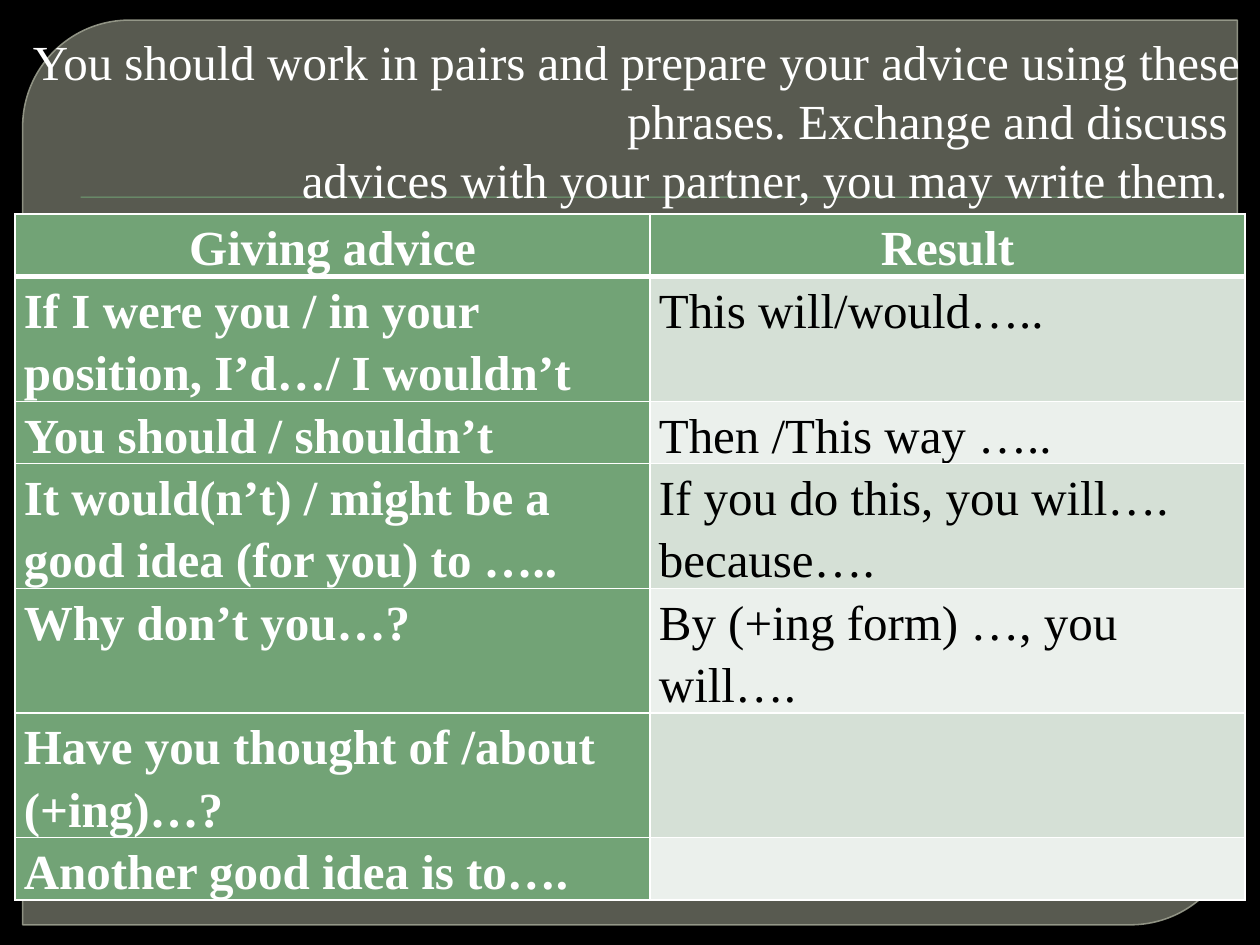
from dataclasses import dataclass

from lxml.etree import SubElement as Sub
from pptx import Presentation
from pptx.dml.color import RGBColor as Rgb
from pptx.enum.shapes import MSO_SHAPE as Kind
from pptx.enum.text import MSO_ANCHOR as Anchor, PP_ALIGN as Align
from pptx.oxml.ns import qn
from pptx.util import Inches, Pt


@dataclass(frozen=True)
class Theme:
    """Colours, font and type size of the slide."""
    back: str = "000000"
    panel: str = "888B7B"
    edge: str = "9DA090"
    green: str = "72A376"
    bands: tuple = ("D5E0D6", "EBF0EC")
    light: str = "FFFFFF"
    dark: str = "000000"
    font: str = "Times New Roman"
    size: int = 28
    pitch: float = 35.6


THEME = Theme()
TITLE = ("You should work in pairs and prepare your advice using these phrases. "
         "Exchange and discuss \vadvices with your partner, you may write them. ")
ROWS = [
    ("Giving advice", "Result"),
    ("If I were you / in your position, I’d…/ I wouldn’t", "This will/would….."),
    ("You should / shouldn’t", "Then /This way ….."),
    ("It would(n’t) / might be a good idea (for you) to …..",
     "If you do this, you will…. because…."),
    ("Why don’t you…?", "By (+ing form) …, you will…."),
    ("Have you thought of /about (+ing)…?", ""),
    ("Another good idea is to….", ""),
]
WIDTHS = (5.04, 4.72)
LOW, HIGH = 0.49, 0.99
HEIGHTS = (LOW, HIGH, LOW, HIGH, HIGH, HIGH, LOW)


def paint(fill, tone, alpha=None):
    """Fill with a solid colour, with an optional opacity in percent."""
    fill.solid()
    fill.fore_color.rgb = Rgb.from_string(tone)
    if alpha:
        node = fill._xPr.find(qn("a:solidFill"))[0]
        Sub(node, qn("a:alpha"), val=str(alpha * 1000))


def style(para, tone, bold=False):
    """Format every run of a paragraph."""
    for run in para.runs:
        font = run.font
        font.name, font.size, font.bold = THEME.font, Pt(THEME.size), bold
        font.color.rgb = Rgb.from_string(tone)


def add_panel(slide):
    """Draw the large panel with two round corners."""
    box = slide.shapes.add_shape(Kind.ROUND_2_DIAG_RECTANGLE, Inches(0.18),
                                 Inches(0.16), Inches(9.64), Inches(7.18))
    box.adjustments[0], box.adjustments[1] = 0.118, 0
    box.shadow.inherit = False
    paint(box.fill, THEME.panel, 65)
    box.line.width = Pt(0.87)
    paint(box.line.fill, THEME.edge, 88)


def add_rule(slide):
    """Draw the thin green rule behind the title."""
    rule = slide.shapes.add_shape(Kind.RECTANGLE, Inches(0.64), Inches(1.56),
                                  Inches(8.75), Inches(0.01))
    rule.shadow.inherit = False
    paint(rule.fill, THEME.green)
    rule.line.fill.background()


def add_title(slide):
    """Write the task at the top, growing up from its base."""
    box = slide.shapes.add_textbox(Inches(0.06), Inches(0.76),
                                   Inches(9.88), Inches(0.94))
    frame = box.text_frame
    frame.word_wrap = True
    frame.vertical_anchor = Anchor.BOTTOM
    frame.text = TITLE
    para = frame.paragraphs[0]
    para.alignment = Align.RIGHT
    style(para, THEME.light)


def add_edge(cell, side, width):
    """Give one side of a cell a solid border."""
    line = Sub(cell._tc.get_or_add_tcPr(), qn("a:ln" + side), w=str(Pt(width)))
    fill = Sub(line, qn("a:solidFill"))
    Sub(fill, qn("a:srgbClr"), val=THEME.light)


def fill_cell(cell, text, row, col):
    """Set the text, borders and fill of a cell by its place."""
    head, key = row == 0, row == 0 or col == 0
    cell.margin_left = cell.margin_right = Inches(0.07)
    cell.margin_top = cell.margin_bottom = 0
    thick = {(0, "B"), (1, "T")}
    for side in "LRTB":
        add_edge(cell, side, 3 if (row, side) in thick else 1)
    paint(cell.fill, THEME.green if key else THEME.bands[(row - 1) % 2])
    if text:
        cell.text_frame.text = text
        para = cell.text_frame.paragraphs[0]
        para.alignment = Align.CENTER if head else Align.LEFT
        para.line_spacing, para.space_after = Pt(THEME.pitch), Pt(10)
        style(para, THEME.light if key else THEME.dark, key)


def add_grid(slide):
    """Build the table of phrases and results."""
    grid = slide.shapes.add_table(len(ROWS), len(WIDTHS), Inches(0.12), Inches(1.7),
                                  Inches(sum(WIDTHS)), Inches(sum(HEIGHTS))).table
    for col, width in zip(grid.columns, WIDTHS):
        col.width = Inches(width)
    for row, height in zip(grid.rows, HEIGHTS):
        row.height = Inches(height)
    for r, texts in enumerate(ROWS):
        for c, text in enumerate(texts):
            fill_cell(grid.cell(r, c), text, r, c)


def main():
    """Build and save the slide."""
    deck = Presentation()
    deck.slide_width, deck.slide_height = Inches(10), Inches(7.5)
    slide = deck.slides.add_slide(deck.slide_layouts[6])
    paint(slide.background.fill, THEME.back)
    add_panel(slide)
    add_rule(slide)
    add_title(slide)
    add_grid(slide)
    deck.save("out.pptx")


if __name__ == "__main__":
    main()
